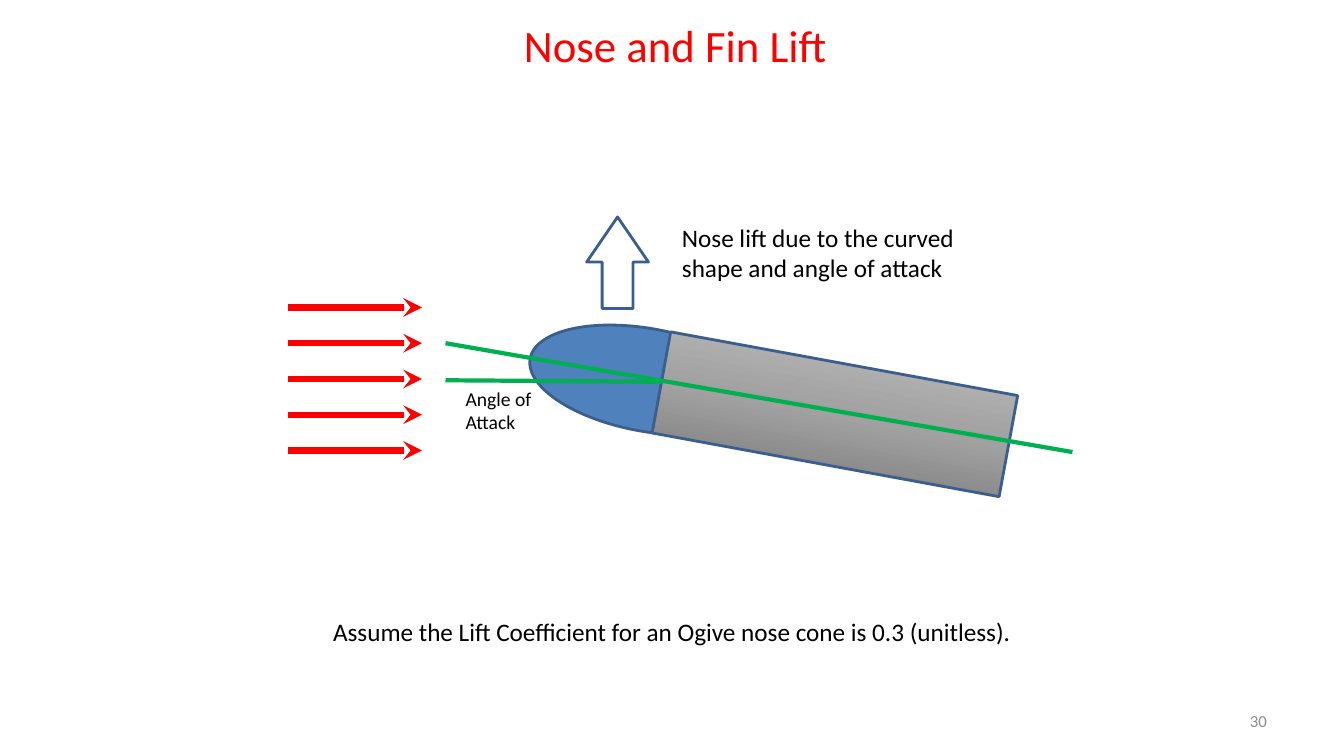
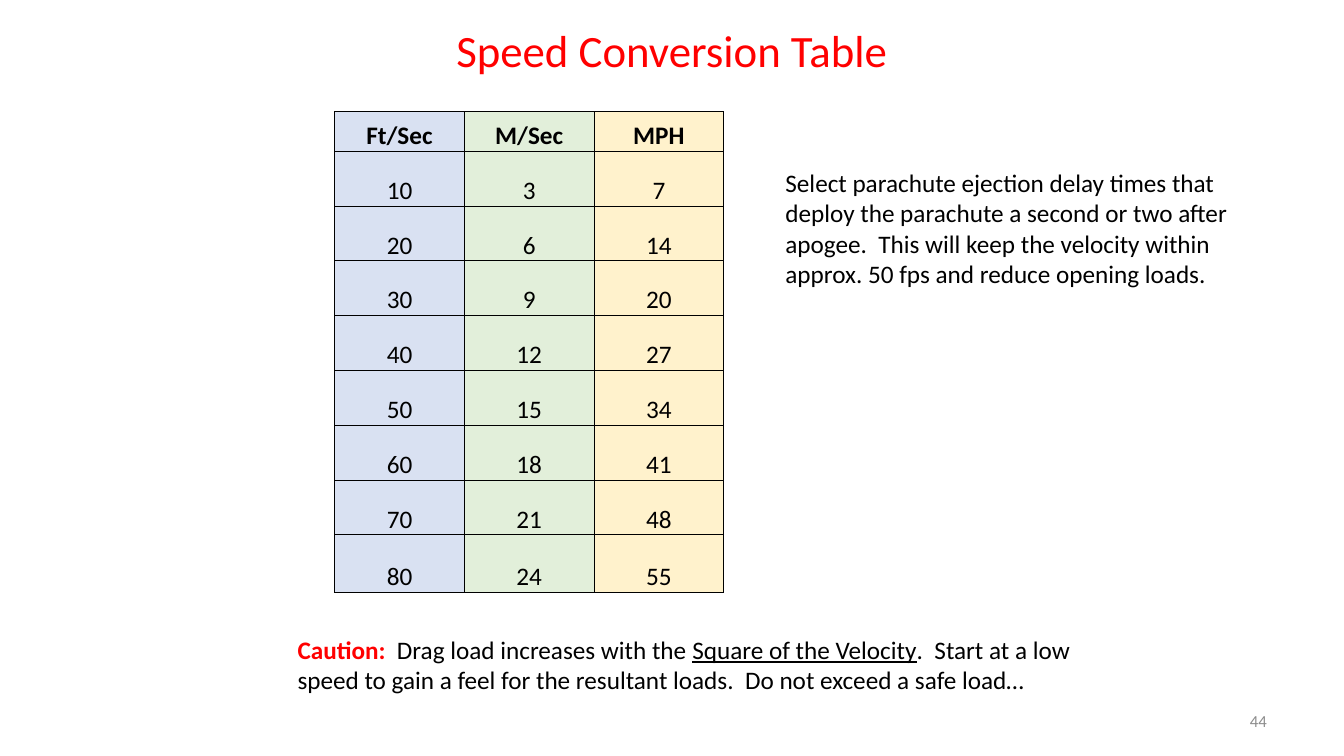
from copy import deepcopy
from dataclasses import dataclass

from lxml import etree
from pptx import Presentation
from pptx import util as u
from pptx.dml.color import RGBColor
from pptx.enum import shapes, text
from pptx.oxml.ns import qn


# Colours and type sizes
@dataclass(frozen=True)
class Theme:
    font: str = "Calibri"
    ink: str = "000000"
    red: str = "FF0000"
    green: str = "00B050"
    blue: str = "4F81BD"
    edge: str = "3A5F8C"
    grey: str = "8C8C8C"
    metal: tuple = ((0, "717171"), (0.5, "A1A1A1"), (1, "BFBFBF"))
    tints: tuple = ("D9E1F2", "E2EFDA", "FFF2CC")
    head: int = 32
    body: int = 18
    note: int = 14
    foot: int = 12


T = Theme()
WIDE, HIGH = 13.33, 7.5
TILT = 10.4  # degrees, shared by nose and body
LEFT, MID, RIGHT = text.PP_ALIGN.LEFT, text.PP_ALIGN.CENTER, text.PP_ALIGN.RIGHT


# Grid of 100 columns by 100 rows
def col(n):
    return u.Inches(WIDE * n / 100)


def row(n):
    return u.Inches(HIGH * n / 100)


def area(x, y, w, h):
    return col(x), row(y), col(w), row(h)


def rgb(code):
    return RGBColor.from_string(code)


# Text
def add_run(para, words, size, ink=T.ink, bold=False, under=False):
    run = para.add_run()
    run.text = words
    font = run.font
    font.name, font.size, font.bold = T.font, u.Pt(size), bold
    font.color.rgb = rgb(ink)
    if under:
        font.underline = True


def add_text(slide, box, runs, size=T.body, align=LEFT, ink=T.ink,
             anchor=text.MSO_ANCHOR.TOP):
    frame = slide.shapes.add_textbox(*area(*box)).text_frame
    frame.word_wrap = True
    frame.vertical_anchor = anchor
    para = frame.paragraphs[0]
    para.alignment = align
    for words, style in runs:
        add_run(para, words, size, **{"ink": ink, **style})


def plain(words):
    return [(words, {})]


# Title and page number shared by the slides
def add_slide(deck, title, spot, page):
    slide = deck.slides.add_slide(deck.slide_layouts[6])
    add_text(slide, (*spot, 67.5, 8.9), plain(title), T.head, MID, T.red)
    add_text(slide, (71.7, 92.67, 23.3, 5.33), plain(page), T.foot, RIGHT,
             T.grey, text.MSO_ANCHOR.MIDDLE)
    return slide


# Shapes and lines
def add_form(slide, kind, box, turn=0):
    form = slide.shapes.add_shape(kind, *area(*box))
    form.shadow.inherit = False
    form.rotation = turn
    form.line.color.rgb = rgb(T.edge)
    form.line.width = u.Pt(2)
    return form


def fill_metal(form):
    form.fill.gradient()
    form.fill.gradient_angle = 90
    stops = form._element.spPr.find(".//" + qn("a:gsLst"))
    stops.append(deepcopy(stops[-1]))
    for stop, (place, tone) in zip(form.fill.gradient_stops, T.metal):
        stop.position = place
        stop.color.rgb = rgb(tone)


def add_line(slide, start, end, ink, width, tip=None):
    line = slide.shapes.add_connector(
        shapes.MSO_CONNECTOR.STRAIGHT,
        col(start[0]), row(start[1]), col(end[0]), row(end[1]))
    line.line.color.rgb = rgb(ink)
    line.line.width = u.Pt(width)
    if tip:
        etree.SubElement(line.line._get_or_add_ln(), qn("a:tailEnd"), type=tip)
    etree.SubElement(line._element.spPr, qn("a:effectLst"))


# Table
def add_edge(cell, side, width):
    line = etree.SubElement(cell._tc.get_or_add_tcPr(), qn("a:ln" + side),
                            w=str(u.Pt(width)))
    fill = etree.SubElement(line, qn("a:solidFill"))
    etree.SubElement(fill, qn("a:srgbClr"), val=T.ink)


def fill_cell(cell, words, tint, bold, outer):
    for side in "LRTB":
        add_edge(cell, side, 1 if side in outer else 0.5)
    cell.fill.solid()
    cell.fill.fore_color.rgb = rgb(tint)
    cell.margin_left = cell.margin_right = cell.margin_top = u.Inches(0.01)
    cell.margin_bottom = 0
    cell.vertical_anchor = text.MSO_ANCHOR.BOTTOM
    para = cell.text_frame.paragraphs[0]
    para.alignment = MID
    add_run(para, words, T.body, bold=bold)


def add_grid(slide, x, y, wide, tall, data):
    rows, cols = len(data), len(data[0])
    grid = slide.shapes.add_table(
        rows, cols, *area(x, y, wide * cols, sum(tall))).table
    grid.first_row = grid.horz_banding = False
    for band in grid.columns:
        band.width = col(wide)
    for r, items in enumerate(data):
        grid.rows[r].height = row(tall[r])
        for c, item in enumerate(items):
            tests = {"L": c == 0, "R": c == cols - 1,
                     "T": r == 0, "B": r == rows - 1}
            outer = [side for side, hit in tests.items() if hit]
            fill_cell(grid.cell(r, c), str(item), T.tints[c], r == 0, outer)


# Slides
def draw_lift(deck):
    slide = add_slide(deck, "Nose and Fin Lift", (16.5, 1.75), "30")

    # Rocket
    kinds = shapes.MSO_SHAPE
    nose = add_form(slide, kinds.OVAL, (39.3, 43.47, 17.7, 13.6), TILT)
    nose.fill.solid()
    nose.fill.fore_color.rgb = rgb(T.blue)
    fill_metal(add_form(slide, kinds.RECTANGLE, (49, 48, 26.25, 13.6), TILT))

    # Air flow
    for n in range(5):
        y = 40.67 + 4.73 * n
        add_line(slide, (21.4, y), (31.4, y), T.red, 4.5, "stealth")

    # Angle of attack
    add_line(slide, (33.15, 45.4), (79.8, 59.8), T.green, 3)
    add_line(slide, (33.15, 50.3), (49.2, 50.5), T.green, 3)
    add_text(slide, (33.9, 50.5, 9.75, 7.6), plain("Angle of Attack"), T.note)

    # Lift
    lift = add_form(slide, kinds.UP_ARROW, (43.65, 28.7, 4.6, 12.1))
    lift.adjustments[0], lift.adjustments[1] = 0.5, 0.73
    lift.fill.background()
    add_text(slide, (50, 28.7, 22.1, 9.5), plain(
        "Nose lift due to the curved shape and angle of attack"))
    add_text(slide, (23.85, 80.9, 52.3, 5.33), plain(
        "Assume the Lift Coefficient for an Ogive nose cone is 0.3 (unitless)."),
        align=MID)


def draw_speed(deck):
    slide = add_slide(deck, "Speed Conversion Table", (16.25, 2.3), "44")

    # Speeds
    data = [("Ft/Sec", "M/Sec", "MPH"),
            (10, 3, 7), (20, 6, 14), (30, 9, 20), (40, 12, 27),
            (50, 15, 34), (60, 18, 41), (70, 21, 48), (80, 24, 55)]
    add_grid(slide, 24.9, 14.8, 9.65, [5.2] + [7.25] * 7 + [7.6], data)

    # Advice
    add_text(slide, (21.4, 83.2, 60.8, 9.5), [
        ("Caution:", {"ink": T.red, "bold": True}),
        ("  Drag load increases with the ", {}),
        ("Square of the Velocity", {"under": True}),
        (".  Start at a low speed to gain a feel for the resultant loads.  "
         "Do not exceed a safe load…", {})])
    add_text(slide, (57.7, 21.5, 36.3, 17.5), plain(
        "Select parachute ejection delay times that deploy the parachute "
        "a second or two after apogee.  This will keep the velocity within "
        "approx. 50 fps and reduce opening loads."))


def main():
    deck = Presentation()
    deck.slide_width, deck.slide_height = u.Inches(WIDE), u.Inches(HIGH)
    draw_lift(deck)
    draw_speed(deck)
    deck.save("out.pptx")


if __name__ == "__main__":
    main()
